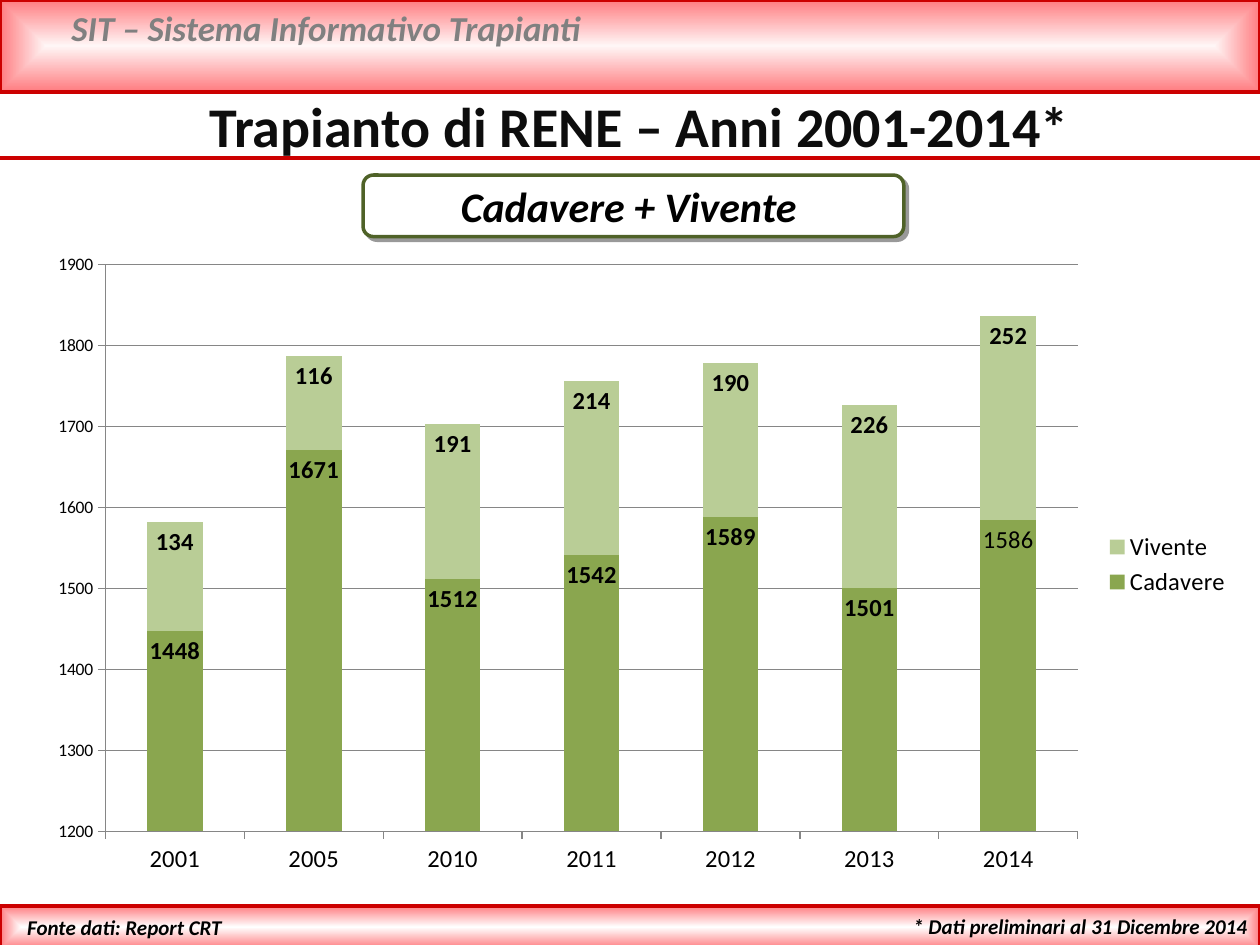
from pptx import Presentation
from pptx.chart.data import CategoryChartData
from pptx.dml.color import RGBColor
from pptx.enum.chart import (XL_CHART_TYPE as ChartType, XL_LABEL_POSITION as LabelPos,
                             XL_LEGEND_POSITION as LegendPos, XL_TICK_MARK as Tick)
from pptx.enum.shapes import MSO_CONNECTOR as Connector, MSO_SHAPE as Shape
from pptx.enum.text import MSO_ANCHOR as Anchor, PP_ALIGN as Align
from pptx.oxml import parse_xml
from pptx.oxml.ns import nsdecls, qn
from pptx.util import Cm, Pt

FONT = "Calibri"
RED = "CC0000"
BLACK = "000000"
GREY = "868686"


def color(value):
    return RGBColor.from_string(value)


def add_text(text, left, top, width, height, size, ink=BLACK, italic=True, align=Align.LEFT):
    box = slide.shapes.add_textbox(Cm(left), Cm(top), Cm(width), Cm(height))
    frame = box.text_frame
    frame.word_wrap = True
    frame.vertical_anchor = Anchor.MIDDLE
    line = frame.paragraphs[0]
    line.text = text
    line.alignment = align
    line.font.name = FONT
    line.font.size = Pt(size)
    line.font.bold = True
    line.font.italic = italic
    line.font.color.rgb = color(ink)


prs = Presentation()
prs.slide_width, prs.slide_height = Cm(25.4), Cm(19.05)
slide = prs.slides.add_slide(prs.slide_layouts[6])

# Header and footer bands, light in the centre
for top, height, centre in [(0, 1.85, "FFF6F6"), (18.26, 0.86, "FFFFFF")]:
    band = slide.shapes.add_shape(Shape.RECTANGLE, 0, Cm(top), Cm(25.4), Cm(height))
    band.shadow.inherit = False
    band.line.color.rgb = color(RED)
    band.line.width = Pt(2)
    band.fill.gradient()
    for stop, shade in zip(band.fill.gradient_stops, [centre, "FF7C80"]):
        stop.color.rgb = color(shade)
    gradient = band._element.spPr.find(qn("a:gradFill"))
    gradient.replace(gradient.find(qn("a:lin")), parse_xml(
        f'<a:path {nsdecls("a")} path="shape">'
        '<a:fillToRect l="50000" t="50000" r="50000" b="50000"/></a:path>'))

# Rules under the header and the title
for y in (1.85, 3.18):
    rule = slide.shapes.add_connector(Connector.STRAIGHT, 0, Cm(y), Cm(25.4), Cm(y))
    rule.line.color.rgb = color(RED)
    rule.line.width = Pt(2)
    rule._element.spPr.append(parse_xml(f'<a:effectLst {nsdecls("a")}/>'))

# Subtitle frame with a hard shadow
frame = slide.shapes.add_shape(Shape.ROUNDED_RECTANGLE, Cm(7.32), Cm(3.53), Cm(10.9), Cm(1.24))
frame.fill.solid()
frame.fill.fore_color.rgb = color("FFFFFF")
frame.line.color.rgb = color("4F6228")
frame.line.width = Pt(2)
frame._element.spPr.append(parse_xml(
    f'<a:effectLst {nsdecls("a")}><a:outerShdw dist="38100" dir="2700000" algn="tl" rotWithShape="0">'
    '<a:srgbClr val="000000"><a:alpha val="40000"/></a:srgbClr></a:outerShdw></a:effectLst>'))

# Texts
add_text("SIT – Sistema Informativo Trapianti", 1.19, 0, 22.81, 1.12, 20, ink="808080")
add_text("Trapianto di RENE – Anni 2001-2014*", 2.77, 1.7, 20.24, 1.63, 32,
         ink="0D0D0D", italic=False, align=Align.CENTER)
add_text("Cadavere + Vivente", 9.04, 3.51, 7.47, 1.27, 24)
add_text("Fonte dati: Report CRT", 0.3, 18.31, 8.15, 0.76, 12)
add_text("* Dati preliminari al 31 Dicembre 2014", 14.91, 18.29, 10.49, 0.76, 12, align=Align.RIGHT)

# Transplants per year by donor
transplants = CategoryChartData()
transplants.categories = ["2001", "2005", "2010", "2011", "2012", "2013", "2014"]
transplants.add_series("Cadavere", [1448, 1671, 1512, 1542, 1589, 1501, 1585])
transplants.add_series("Vivente", [134, 116, 191, 214, 190, 226, 252])
chart = slide.shapes.add_chart(ChartType.COLUMN_STACKED, Cm(0.69), Cm(4.88), Cm(24.38), Cm(13),
                               transplants).chart
chart.has_title = False
chart.font.name = FONT
chart.font.size = Pt(10)
chart.font.color.rgb = color(BLACK)

# Axes and gridlines
years, counts = chart.category_axis, chart.value_axis
years.tick_labels.font.size = Pt(14)
counts.minimum_scale, counts.maximum_scale, counts.major_unit = 1200, 1900, 100
counts.has_major_gridlines = True
counts.major_gridlines.format.line.color.rgb = color(GREY)
for axis in (years, counts):
    axis.major_tick_mark = Tick.OUTSIDE
    axis.minor_tick_mark = Tick.NONE
    axis.format.line.color.rgb = color(GREY)

# Legend
chart.has_legend = True
chart.legend.position = LegendPos.RIGHT
chart.legend.include_in_layout = False
chart.legend.font.size = Pt(14)

# Columns and their values
plot = chart.plots[0]
plot.gap_width, plot.overlap = 150, 100
plot.vary_by_categories = False
for donor, green in zip(plot.series, ["8AA64F", "B9CD96"]):
    donor.format.fill.solid()
    donor.format.fill.fore_color.rgb = color(green)
    labels = donor.data_labels
    labels.show_value = True
    labels.position = LabelPos.INSIDE_END
    labels.font.size = Pt(14)
    labels.font.bold = True

# The last deceased-donor value carries its own label
revised = plot.series[0].points[6].data_label
revised.position = LabelPos.INSIDE_END
revised_text = revised.text_frame.paragraphs[0]
revised_text.text = "1586"
revised_text.font.size = Pt(14)
revised_text.font.bold = False

# Fixed plot area
chart._chartSpace.chart.plotArea.get_or_add_layout().append(parse_xml(
    f'<c:manualLayout {nsdecls("c")}><c:layoutTarget val="inner"/>'
    '<c:xMode val="edge"/><c:yMode val="edge"/><c:x val="0.06"/><c:y val="0.03"/>'
    '<c:w val="0.8"/><c:h val="0.88"/></c:manualLayout>')) if hasattr(
    chart._chartSpace.chart.plotArea, "get_or_add_layout") else None

prs.save("out.pptx")
